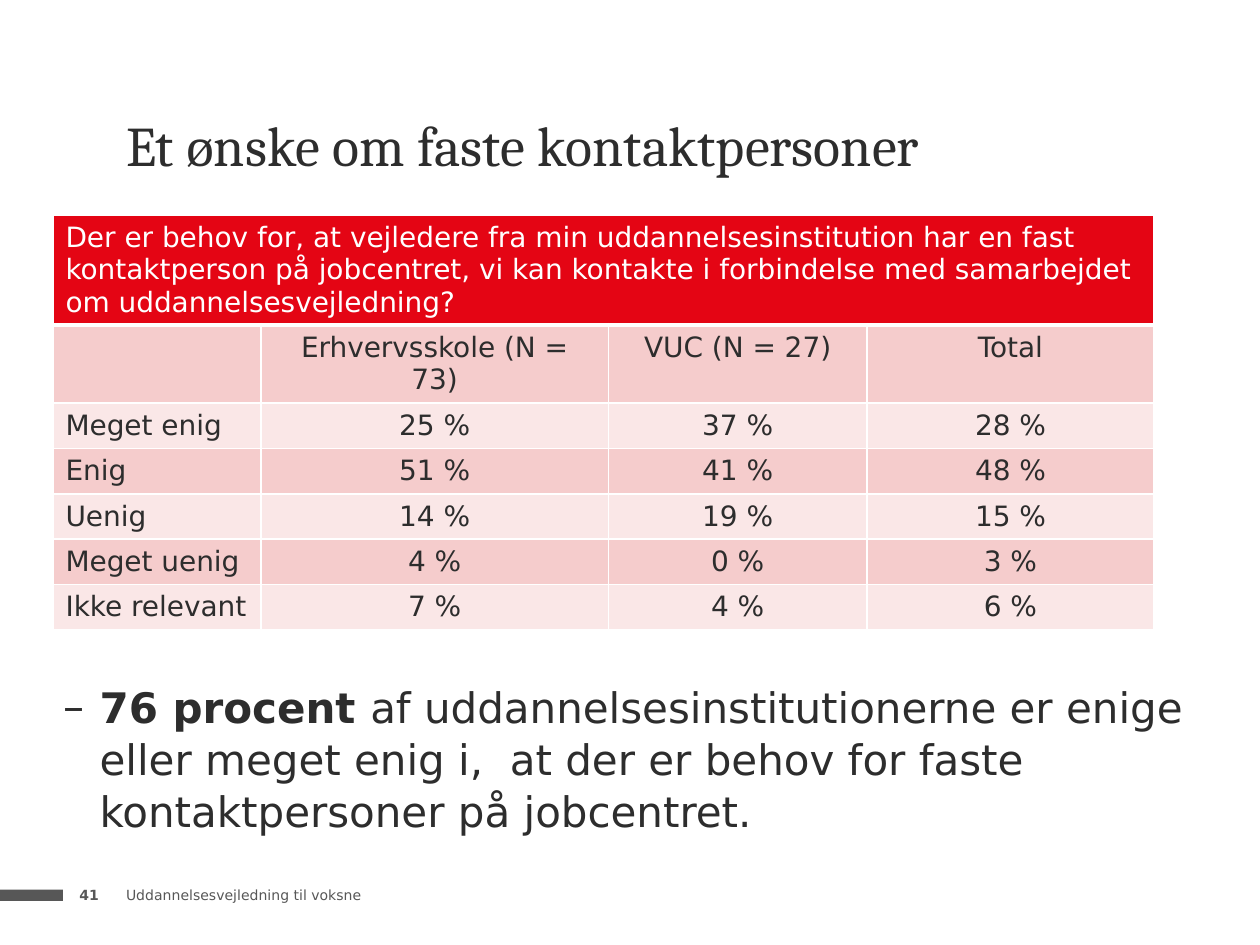
import dataclasses
import typing

import lxml.etree
import pptx
import pptx.dml.color
import pptx.enum.shapes
import pptx.enum.text
import pptx.oxml
import pptx.oxml.ns
import pptx.util

Inches = pptx.util.Inches
Pt = pptx.util.Pt
Anchor = pptx.enum.text.MSO_ANCHOR
Align = pptx.enum.text.PP_ALIGN
qn = pptx.oxml.ns.qn


@dataclasses.dataclass(frozen=True)
class Theme:
    ink: str = "2D2D2D"
    grey: str = "575757"
    white: str = "FFFFFF"
    red: str = "E40514"
    bands: tuple[str, str] = ("F5CCCC", "FAE7E7")
    heading_font: str = "Cambria"
    text_font: str = "DejaVu Sans"
    title_size: int = 32
    body_size: int = 24
    table_size: int = 16
    footer_size: int = 8


@dataclasses.dataclass(frozen=True)
class Box:
    left: float
    top: float
    width: float
    height: float

    def lengths(self) -> list[int]:
        return [Inches(side) for side in dataclasses.astuple(self)]


@dataclasses.dataclass(frozen=True)
class FooterItem:
    text: str
    box: Box
    bold: bool


THEME = Theme()

QUESTION = ("Der er behov for, at vejledere fra min uddannelsesinstitution har en fast "
            "kontaktperson på jobcentret, vi kan kontakte i forbindelse med samarbejdet "
            "om uddannelsesvejledning?")
ANSWERS = [
    ("", "Erhvervsskole (N = 73)", "VUC (N = 27)", "Total"),
    ("Meget enig", "25 %", "37 %", "28 %"),
    ("Enig", "51 %", "41 %", "48 %"),
    ("Uenig", "14 %", "19 %", "15 %"),
    ("Meget uenig", "4 %", "0 %", "3 %"),
    ("Ikke relevant", "7 %", "4 %", "6 %"),
]
COLUMN_WIDTHS = [1.65, 2.76, 2.05, 2.28]
ROW_HEIGHTS = [0.86, 0.62] + [0.36] * 5
FOOTER = [
    FooterItem("Uddannelsesvejledning til voksne", Box(1, 7.02, 5.91, 0.16), False),
    FooterItem("41", Box(0.63, 7.02, 0.37, 0.16), True),
]


def rgb(colour: str) -> pptx.dml.color.RGBColor:
    return pptx.dml.color.RGBColor.from_string(colour)


def apply(target: typing.Any, values: dict[str, typing.Any]) -> None:
    for name, value in values.items():
        setattr(target, name, value)


def add_run(paragraph: typing.Any, text: str, size: int, colour: str,
            bold: bool = False, font: str = THEME.text_font) -> None:
    run = paragraph.add_run()
    run.text = text
    apply(run.font, {"name": font, "size": Pt(size), "bold": bold})
    run.font.color.rgb = rgb(colour)


def place(shape: typing.Any, box: Box, anchor: Anchor, wrap: bool = True) -> typing.Any:
    """Position a text shape, clear its margins and return its first paragraph."""
    apply(shape, dict(zip(("left", "top", "width", "height"), box.lengths())))
    frame = shape.text_frame
    apply(frame, {
        "margin_left": 0, "margin_top": 0, "margin_right": 0, "margin_bottom": 0,
        "vertical_anchor": anchor, "word_wrap": wrap,
        "auto_size": pptx.enum.text.MSO_AUTO_SIZE.NONE,
    })
    return frame.paragraphs[0]


def set_borders(cell: typing.Any, widths: dict[str, int]) -> None:
    properties = cell._tc.get_or_add_tcPr()
    for position, (side, width) in enumerate(widths.items()):
        line = lxml.etree.Element(qn(f"a:ln{side}"), w=str(Pt(width)))
        fill = lxml.etree.SubElement(line, qn("a:solidFill"))
        lxml.etree.SubElement(fill, qn("a:srgbClr"), val=THEME.white)
        properties.insert(position, line)


def set_dash_bullet(paragraph: typing.Any, indent: float) -> None:
    properties = paragraph._p.get_or_add_pPr()
    properties.set("marL", str(Inches(indent)))
    properties.set("indent", str(-Inches(indent)))
    colour = lxml.etree.SubElement(properties, qn("a:buClr"))
    lxml.etree.SubElement(colour, qn("a:srgbClr"), val=THEME.ink)
    lxml.etree.SubElement(properties, qn("a:buFont"), typeface=THEME.text_font)
    lxml.etree.SubElement(properties, qn("a:buChar"), char="–")


def add_answer_table(slide: typing.Any) -> None:
    rows = [(QUESTION, "", "", "")] + ANSWERS
    box = Box(0.42, 1.71, sum(COLUMN_WIDTHS), sum(ROW_HEIGHTS))
    table = slide.shapes.add_table(len(rows), len(COLUMN_WIDTHS), *box.lengths()).table
    for column, width in zip(table.columns, COLUMN_WIDTHS):
        column.width = Inches(width)
    for row, height in zip(table.rows, ROW_HEIGHTS):
        row.height = Inches(height)
    table.cell(0, 0).merge(table.cell(0, len(COLUMN_WIDTHS) - 1))

    for r, texts in enumerate(rows):
        is_question = r == 0
        for c, text in enumerate(texts):
            cell = table.cell(r, c)
            cell.fill.solid()
            cell.fill.fore_color.rgb = rgb(THEME.red if is_question else THEME.bands[(r - 1) % 2])
            # A thicker rule separates the question from the answers
            set_borders(cell, {"L": 1, "R": 1, "T": 3 if r == 1 else 1, "B": 3 if is_question else 1})
            if text:
                paragraph = cell.text_frame.paragraphs[0]
                paragraph.alignment = Align.CENTER if c else Align.LEFT
                add_run(paragraph, text, THEME.table_size, THEME.white if is_question else THEME.ink)


def main() -> None:
    deck = pptx.Presentation()
    apply(deck, {"slide_width": Inches(10), "slide_height": Inches(7.5)})
    slide = deck.slides.add_slide(deck.slide_layouts[1])

    # Footer bar
    bar = slide.shapes.add_shape(pptx.enum.shapes.MSO_SHAPE.RECTANGLE,
                                 *Box(0, 7.06, 0.5, 0.09).lengths())
    bar.shadow.inherit = False
    bar.fill.solid()
    bar.fill.fore_color.rgb = rgb(THEME.grey)
    bar.line.fill.background()

    # Title
    title = place(slide.shapes.title, Box(1, 0.42, 8.75, 0.99), Anchor.BOTTOM)
    title.alignment = Align.LEFT
    add_run(title, "Et ønske om faste kontaktpersoner", THEME.title_size, THEME.ink,
            font=THEME.heading_font)

    # Conclusion below the table
    conclusion = place(slide.placeholders[1], Box(0.5, 5.4, 9, 1.33), Anchor.TOP)
    set_dash_bullet(conclusion, 0.29)
    apply(conclusion, {"alignment": Align.LEFT, "line_spacing": 1.03,
                       "space_before": Pt(0), "space_after": Pt(10)})
    add_run(conclusion, "76 procent ", THEME.body_size, THEME.ink, bold=True)
    add_run(conclusion, "af uddannelsesinstitutionerne er enige eller meget enig i,  at der er "
            "behov for faste kontaktpersoner på jobcentret.", THEME.body_size, THEME.ink)

    # Survey answers
    add_answer_table(slide)

    # Footer text and page number
    for item in FOOTER:
        textbox = slide.shapes.add_textbox(*item.box.lengths())
        paragraph = place(textbox, item.box, Anchor.MIDDLE, wrap=False)
        paragraph.alignment = Align.LEFT
        add_run(paragraph, item.text, THEME.footer_size, THEME.grey, item.bold)

    deck.save("out.pptx")


if __name__ == "__main__":
    main()
